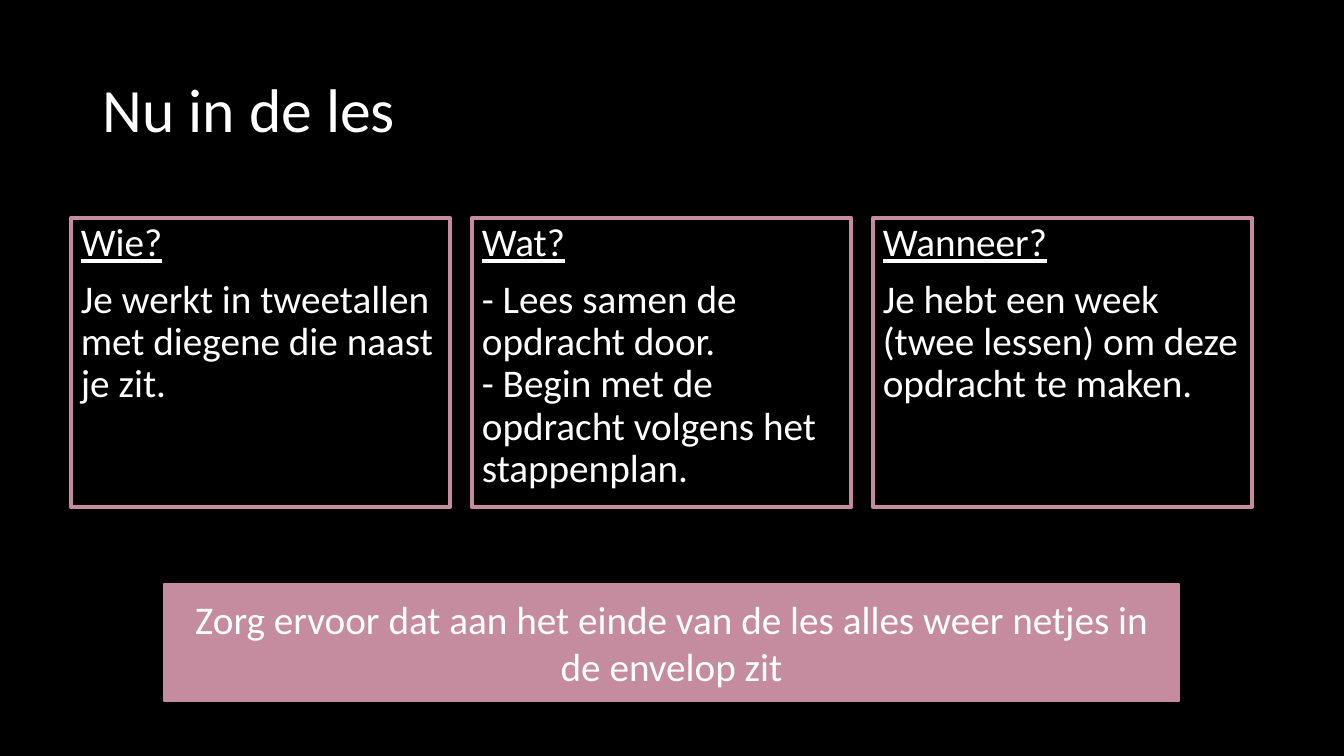
"""Builds the lesson slide with three question boxes and a closing reminder."""
from pptx import Presentation
from pptx.dml.color import RGBColor
from pptx.enum.shapes import MSO_SHAPE as Shape
from pptx.enum.text import MSO_ANCHOR as Anchor, PP_ALIGN as Align
from pptx.util import Pt

EMU_PER_PX = 914400 / 100.8
COLORS = {"background": "000000", "text": "FFFFFF", "accent": "C58B9F"}
QUESTIONS = [
    ("Wie?", "Je werkt in tweetallen met diegene die naast je zit."),
    ("Wat?", "- Lees samen de opdracht door.\n"
             "- Begin met de opdracht volgens het stappenplan."),
    ("Wanneer?", "Je hebt een week (twee lessen) om deze opdracht te maken."),
]
BOX_LEFT, BOX_TOP, BOX_WIDTH, BOX_HEIGHT, BOX_STEP = 71, 218, 379, 289, 401


def px(length):
    return round(length * EMU_PER_PX)


def color(name):
    return RGBColor.from_string(COLORS[name])


def write(paragraph, text, size=28, underline=False, align=Align.LEFT,
          line_spacing=0.9, space_before=0):
    paragraph.text = text
    paragraph.alignment = align
    paragraph.line_spacing = line_spacing
    paragraph.space_before = Pt(space_before)
    for run in paragraph.runs:
        run.font.name = "Calibri"
        run.font.size = Pt(size)
        run.font.underline = underline
        run.font.color.rgb = color("text")


class LessonSlide:
    def __init__(self, presentation):
        self.slide = presentation.slides.add_slide(presentation.slide_layouts[6])
        background = self.slide.background.fill
        background.solid()
        background.fore_color.rgb = color("background")

    def title(self, text, left, top, width, height):
        shape = self.slide.shapes.add_textbox(px(left), px(top), px(width), px(height))
        frame = shape.text_frame
        frame.word_wrap = True
        frame.vertical_anchor = Anchor.MIDDLE
        write(frame.paragraphs[0], text, size=44)

    def rectangle(self, left, top, width, height, line_width, anchor, filled=False):
        shape = self.slide.shapes.add_shape(
            Shape.RECTANGLE, px(left), px(top), px(width), px(height))
        shape.shadow.inherit = False
        shape.line.color.rgb = color("accent")
        shape.line.width = Pt(line_width)
        if filled:
            shape.fill.solid()
            shape.fill.fore_color.rgb = color("accent")
        else:
            shape.fill.background()
        frame = shape.text_frame
        frame.word_wrap = True
        frame.vertical_anchor = anchor
        return frame

    def question_box(self, heading, answer, left):
        frame = self.rectangle(left, BOX_TOP, BOX_WIDTH, BOX_HEIGHT, 3.25, Anchor.TOP)
        write(frame.paragraphs[0], heading, underline=True)
        write(frame.add_paragraph(), answer, space_before=10)

    def banner(self, text, left, top, width, height):
        frame = self.rectangle(left, top, width, height, 1, Anchor.MIDDLE, filled=True)
        write(frame.paragraphs[0], text, align=Align.CENTER, line_spacing=1.0)


def main():
    presentation = Presentation()
    presentation.slide_width = px(1344)
    presentation.slide_height = px(756)
    lesson = LessonSlide(presentation)
    lesson.title("Nu in de les", 93, 40, 1159, 146)
    for index, (heading, answer) in enumerate(QUESTIONS):
        lesson.question_box(heading, answer, BOX_LEFT + index * BOX_STEP)
    lesson.banner("Zorg ervoor dat aan het einde van de les alles weer netjes in "
                  "de envelop zit", 164, 584, 1015, 117)
    presentation.save("out.pptx")


if __name__ == "__main__":
    main()
